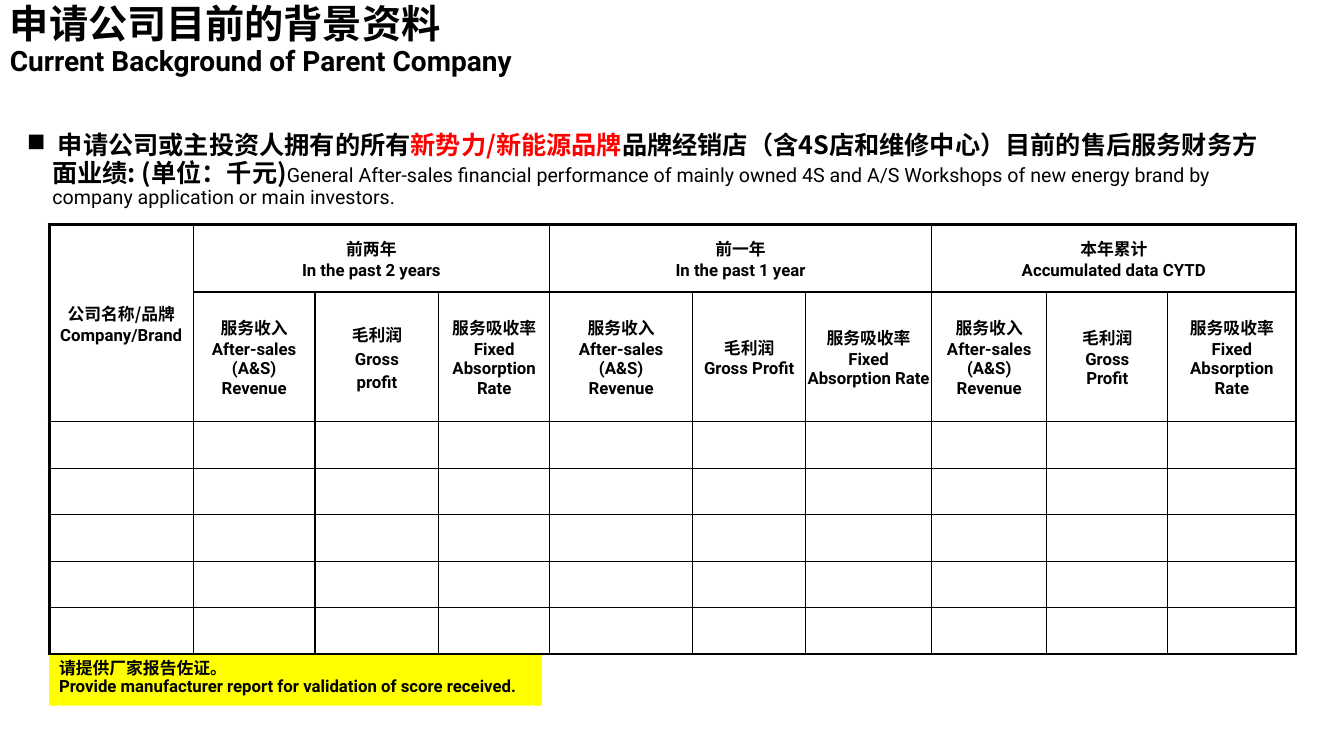
from lxml import etree
from pptx import Presentation, util as u
from pptx.dml.color import RGBColor
from pptx.enum import shapes, text
from pptx.oxml import ns

CJK, LATIN = "Noto Sans CJK SC", "Roboto"
BLACK, RED, YELLOW = "000000", "FF0000", "FFFF00"


def colour(code):
    return RGBColor.from_string(code)


def child(parent, tag, **attributes):
    return etree.SubElement(parent, ns.qn(tag), attributes)


def apply(target, values):
    for name, value in values.items():
        setattr(target, name, value)


class FormSlide:
    """Holds the style of the form and the slide it is drawn on."""
    thick, thin = 2.25, 1

    def __init__(self, deck):
        self.slide = deck.slides.add_slide(deck.slide_layouts[6])

    def run(self, paragraph, words, size, font=CJK, bold=True, code=BLACK):
        run = paragraph.add_run()
        run.text = words
        apply(run.font, {"name": font, "size": u.Pt(size), "bold": bold})
        run.font.color.rgb = colour(code)
        child(run.font._element, "a:ea", typeface=font)

    def lines(self, frame, lines, **paragraph_format):
        """Writes a Chinese first line and English lines below it, at 12 pt."""
        for i, line in enumerate(lines):
            paragraph = frame.add_paragraph() if i else frame.paragraphs[0]
            self.run(paragraph, line, 12, LATIN if i else CJK)
            apply(paragraph, paragraph_format)
        return frame.paragraphs

    def text_box(self, left, top, width, height):
        box = self.slide.shapes.add_textbox(*map(u.Cm, (left, top, width, height)))
        box.text_frame.word_wrap = True
        paragraph = box.text_frame.paragraphs[0]
        paragraph.line_spacing = 0.9
        return paragraph

    def title(self, chinese, english):
        paragraph = self.text_box(0, 0, 23.67, 2.24)
        self.run(paragraph, chinese, 28)
        paragraph.add_line_break()
        self.run(paragraph, english, 20, LATIN)

    def bullet(self, runs):
        paragraph = self.text_box(0.43, 3.23, 31.57, 2.97)
        properties = paragraph._p.get_or_add_pPr()
        properties.set("marL", str(u.Cm(0.64)))
        properties.set("indent", str(u.Cm(-0.64)))
        child(properties, "a:buChar", char="■")
        for words, values in runs:
            self.run(paragraph, words, **{"size": 18, **values})

    def borders(self, cell, sides):
        """Draws the cell borders; sides maps L, R, T, B to widths in points."""
        properties = cell._tc.get_or_add_tcPr()
        for i, (side, width) in enumerate(sides.items()):
            line = etree.Element(ns.qn(f"a:ln{side}"), w=str(u.Pt(width)))
            child(child(line, "a:solidFill"), "a:srgbClr", val=BLACK)
            properties.insert(i, line)

    def table(self, left, top, widths, heights):
        row_count, column_count = len(heights), len(widths)
        table = self.slide.shapes.add_table(
            row_count, column_count,
            *map(u.Cm, (left, top, sum(widths), sum(heights)))).table
        apply(table, {"first_row": False, "horz_banding": False})
        for column, width in zip(table.columns, widths):
            column.width = u.Cm(width)
        for row, height in zip(table.rows, heights):
            row.height = u.Cm(height)
        cell_format = {"margin_left": 0, "margin_right": 0, "margin_top": 0,
                       "margin_bottom": 0,
                       "vertical_anchor": text.MSO_ANCHOR.MIDDLE}
        for r in range(row_count):
            for c in range(column_count):
                cell = table.cell(r, c)
                apply(cell, cell_format)
                cell.fill.background()
                outer = {"L": c == 0, "R": c == column_count - 1,
                         "T": r == 0, "B": r == row_count - 1}
                self.borders(cell, {side: self.thick if edge else self.thin
                                    for side, edge in outer.items()})
        return table

    def heading(self, cell, lines):
        return self.lines(cell.text_frame, lines, alignment=text.PP_ALIGN.CENTER)

    def note(self, left, top, width, height, lines):
        box = self.slide.shapes.add_shape(
            shapes.MSO_SHAPE.RECTANGLE, *map(u.Cm, (left, top, width, height)))
        box.shadow.inherit = False
        box.fill.solid()
        box.fill.fore_color.rgb = colour(YELLOW)
        box.line.fill.background()
        apply(box.text_frame, {"word_wrap": False,
                               "auto_size": text.MSO_AUTO_SIZE.SHAPE_TO_FIT_TEXT,
                               "vertical_anchor": text.MSO_ANCHOR.TOP})
        self.lines(box.text_frame, lines, alignment=text.PP_ALIGN.LEFT,
                   line_spacing=0.9)


def main():
    deck = Presentation()
    apply(deck, {"slide_width": u.Cm(33.87), "slide_height": u.Cm(19.05)})
    form = FormSlide(deck)
    form.title("申请公司目前的背景资料", "Current Background of Parent Company")
    form.bullet([
        (" ", {"bold": False}),
        ("申请公司或主投资人拥有的所有", {}),
        ("新势力/新能源品牌", {"code": RED}),
        ("品牌经销店（含4S店和维修中心）目前的售后服务财务方面业绩: (单位：千元)", {}),
        ("General After-sales financial performance of mainly owned 4S and A/S "
         "Workshops of new energy brand by company application or main investors.",
         {"size": 14, "font": LATIN, "bold": False}),
    ])

    widths = [3.63, 3.07, 3.12, 2.79, 3.61, 2.84, 3.18, 2.9, 3.05, 3.23]
    results = form.table(1.24, 5.66, widths, [1.7, 3.27] + [1.17] * 5)
    results.cell(0, 0).merge(results.cell(1, 0))
    form.heading(results.cell(0, 0), ["公司名称/品牌", "Company/Brand"])

    revenue = ["服务收入", "After-sales", "(A&S)", "Revenue"]
    absorption = ["服务吸收率", "Fixed Absorption Rate"]
    periods = [
        (["前两年", "In the past 2 years"],
         [revenue, ["毛利润", "Gross", "profit"], absorption]),
        (["前一年", "In the past 1 year"],
         [revenue, ["毛利润", "Gross Profit"], absorption]),
        (["本年累计", "Accumulated data CYTD"],
         [revenue, ["毛利润", "Gross", "Profit"],
          ["服务吸收率", "Fixed Absorption", "Rate"]]),
    ]
    for i, (period, measures) in enumerate(periods):
        first = 1 + 3 * i
        results.cell(0, first).merge(results.cell(0, first + 2))
        form.heading(results.cell(0, first), period)
        for column, measure in enumerate(measures, first):
            paragraphs = form.heading(results.cell(1, column), measure)
            if "profit" in measure:
                for paragraph in paragraphs[1:]:
                    paragraph.space_before = u.Pt(2.4)

    form.note(1.24, 16.51, 12.42, 1.27,
              ["请提供厂家报告佐证。",
               "Provide manufacturer report for validation of score received."])
    deck.save("out.pptx")


if __name__ == "__main__":
    main()
